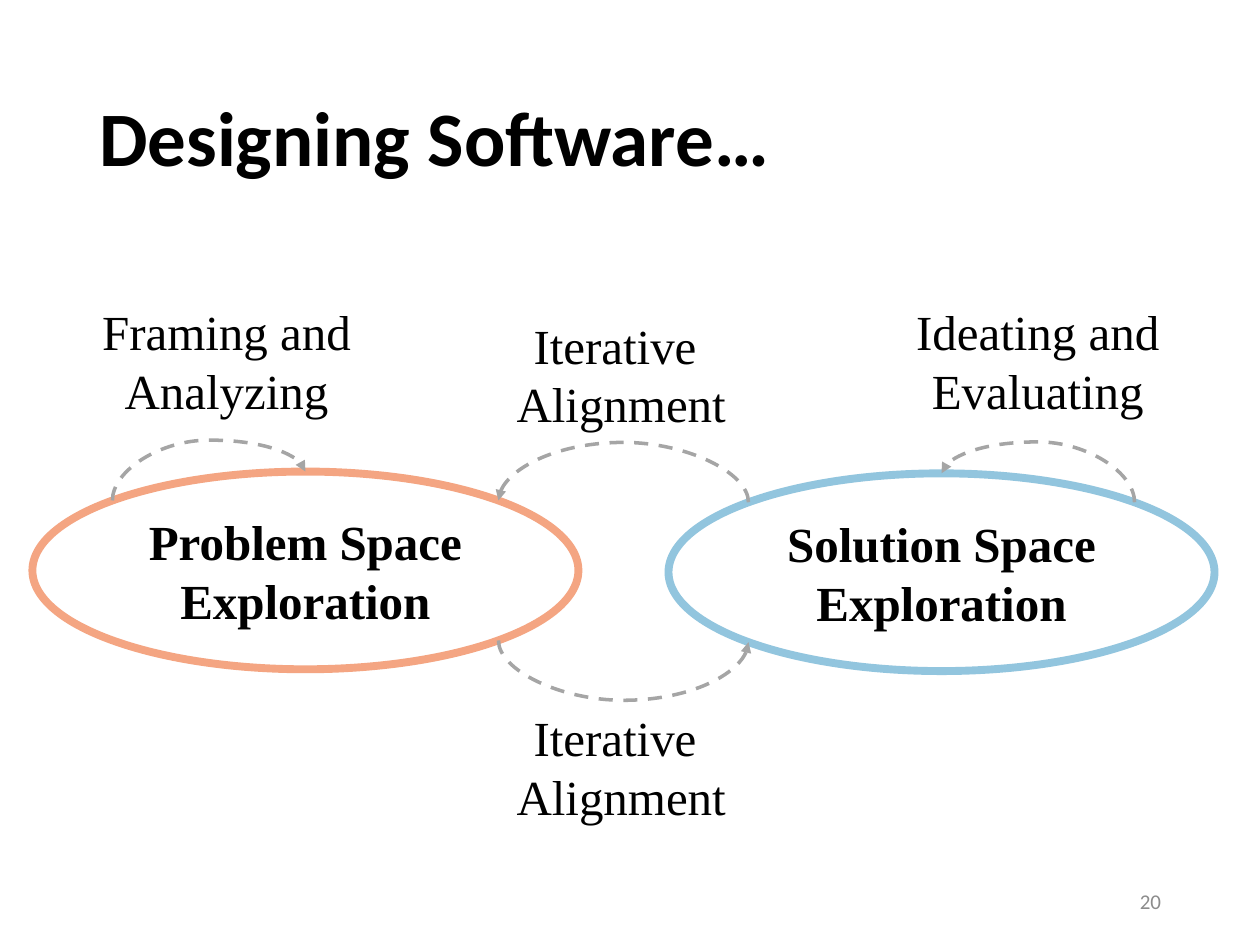
from math import cos, pi, sin

from lxml.etree import SubElement
from pptx import Presentation
from pptx.dml.color import RGBColor
from pptx.enum.dml import MSO_LINE
from pptx.enum.shapes import MSO_CONNECTOR, MSO_SHAPE
from pptx.enum.text import MSO_ANCHOR, MSO_AUTO_SIZE, PP_ALIGN
from pptx.oxml.ns import qn
from pptx.util import Pt

SERIF = "Times New Roman"
SPACE_W, SPACE_H = 312, 113
BULGE = 34.5  # how far each arc swells beyond its starting point


def color(hex_code):
    return RGBColor.from_string(hex_code)


def add_run(paragraph, text, size, font, hex_code="000000", bold=False):
    run = paragraph.add_run()
    run.text = text
    run.font.size, run.font.name, run.font.bold = Pt(size), font, bold
    run.font.color.rgb = color(hex_code)


def add_paragraphs(frame, lines, bold=False):
    for i, line in enumerate(lines):
        paragraph = frame.add_paragraph() if i else frame.paragraphs[0]
        paragraph.alignment = PP_ALIGN.CENTER
        add_run(paragraph, line, 28, SERIF, bold=bold)


def add_title(slide, left, top, width, height, text):
    title = slide.shapes.title
    title.left, title.top, title.width, title.height = map(Pt, (left, top, width, height))
    title.text_frame.vertical_anchor = MSO_ANCHOR.MIDDLE
    paragraph = title.text_frame.paragraphs[0]
    paragraph.alignment, paragraph.line_spacing = PP_ALIGN.LEFT, 0.9
    add_run(paragraph, text, 44, "Calibri", bold=True)


def add_page_number(slide, left, top, width, height, number):
    frame = slide.shapes.add_textbox(*map(Pt, (left, top, width, height))).text_frame
    frame.word_wrap, frame.vertical_anchor = True, MSO_ANCHOR.MIDDLE
    frame.paragraphs[0].alignment = PP_ALIGN.RIGHT
    add_run(frame.paragraphs[0], number, 12, "Calibri", "8C8C8C")


def add_space(slide, left, top, lines, line_color):
    """Draw a space's ellipse and return a function giving the point on its rim at an angle."""
    space = slide.shapes.add_shape(MSO_SHAPE.OVAL, *map(Pt, (left, top, SPACE_W, SPACE_H)))
    space.shadow.inherit = False
    space.fill.background()
    space.line.color.rgb, space.line.width = color(line_color), Pt(4.5)
    space.text_frame.word_wrap = True
    space.text_frame.vertical_anchor = MSO_ANCHOR.MIDDLE
    add_paragraphs(space.text_frame, lines, bold=True)

    def rim(degrees):
        angle = degrees * pi / 180
        return (left + SPACE_W / 2 * (1 + cos(angle)),
                top + SPACE_H / 2 * (1 - sin(angle)))

    return rim


def add_label(slide, left, top, width):
    frame = slide.shapes.add_textbox(*map(Pt, (left, top, width, 75))).text_frame
    frame.word_wrap, frame.auto_size = True, MSO_AUTO_SIZE.SHAPE_TO_FIT_TEXT
    return frame


def add_activity_label(slide, left, top, width, first, second):
    paragraph = add_label(slide, left, top, width).paragraphs[0]
    paragraph.alignment = PP_ALIGN.CENTER
    add_run(paragraph, first, 28, SERIF)
    paragraph.add_line_break()
    add_run(paragraph, second, 28, SERIF)


def add_arc(slide, start, end, turn, flip_h=False, flip_v=False):
    """Add a dashed curved arrow, laid out flat about its middle and then turned."""
    (x1, y1), (x2, y2) = start, end
    rise, run = abs(y2 - y1), abs(x2 - x1)
    mid_x, mid_y = (x1 + x2) / 2, (y1 + y2) / 2
    dx = -rise / 2 if flip_h else rise / 2
    dy = -run / 2 if flip_v else run / 2
    arc = slide.shapes.add_connector(
        MSO_CONNECTOR.CURVE,
        *map(Pt, (mid_x - dx, mid_y - dy, mid_x + dx, mid_y + dy)))
    arc.line.color.rgb, arc.line.width = color("A5A5A5"), Pt(2)
    arc.line.dash_style = MSO_LINE.DASH
    properties = arc._element.spPr
    properties.find(qn("a:xfrm")).set("rot", str(turn * 60000))
    adjustments = properties.find(qn("a:prstGeom")).find(qn("a:avLst"))
    SubElement(adjustments, qn("a:gd"), name="adj1",
               fmla=f"val {round(BULGE / rise * 100000)}")
    SubElement(properties.find(qn("a:ln")), qn("a:tailEnd"), type="triangle")
    SubElement(properties, qn("a:effectLst"))


def add_design_diagram(slide, left, top):
    problem = add_space(slide, left, top, ["Problem Space", "Exploration"], "F4A582")
    solution = add_space(slide, left + 363.5, top + 1,
                         ["Solution Space", "Exploration"], "92C5DE")

    add_activity_label(slide, left - 44.6, top - 100.5, 311, "Framing and", "Analyzing")
    add_activity_label(slide, left + 417, top - 100.5, 315, "Ideating and", "Evaluating")

    add_arc(slide, problem(135), problem(90), 90, flip_h=True, flip_v=True)
    add_arc(slide, solution(45), solution(90), 270, flip_v=True)
    add_arc(slide, solution(135), problem(45), 270, flip_v=True)
    add_arc(slide, problem(-45), solution(-135), 270, flip_h=True)

    for label_top in (top + 131.5, top - 93):
        add_paragraphs(add_label(slide, left + 238.5, label_top, 196),
                       ["Iterative ", "Alignment"])


def main():
    deck = Presentation()
    deck.slide_width, deck.slide_height = Pt(720), Pt(540)
    slide = deck.slides.add_slide(deck.slide_layouts[5])
    add_title(slide, 49.5, 28.75, 621, 104.4, "Designing Software…")
    add_page_number(slide, 508.5, 500.5, 162, 28.75, "20")
    add_design_diagram(slide, 18.5, 269.5)
    deck.save("out.pptx")


if __name__ == "__main__":
    main()
